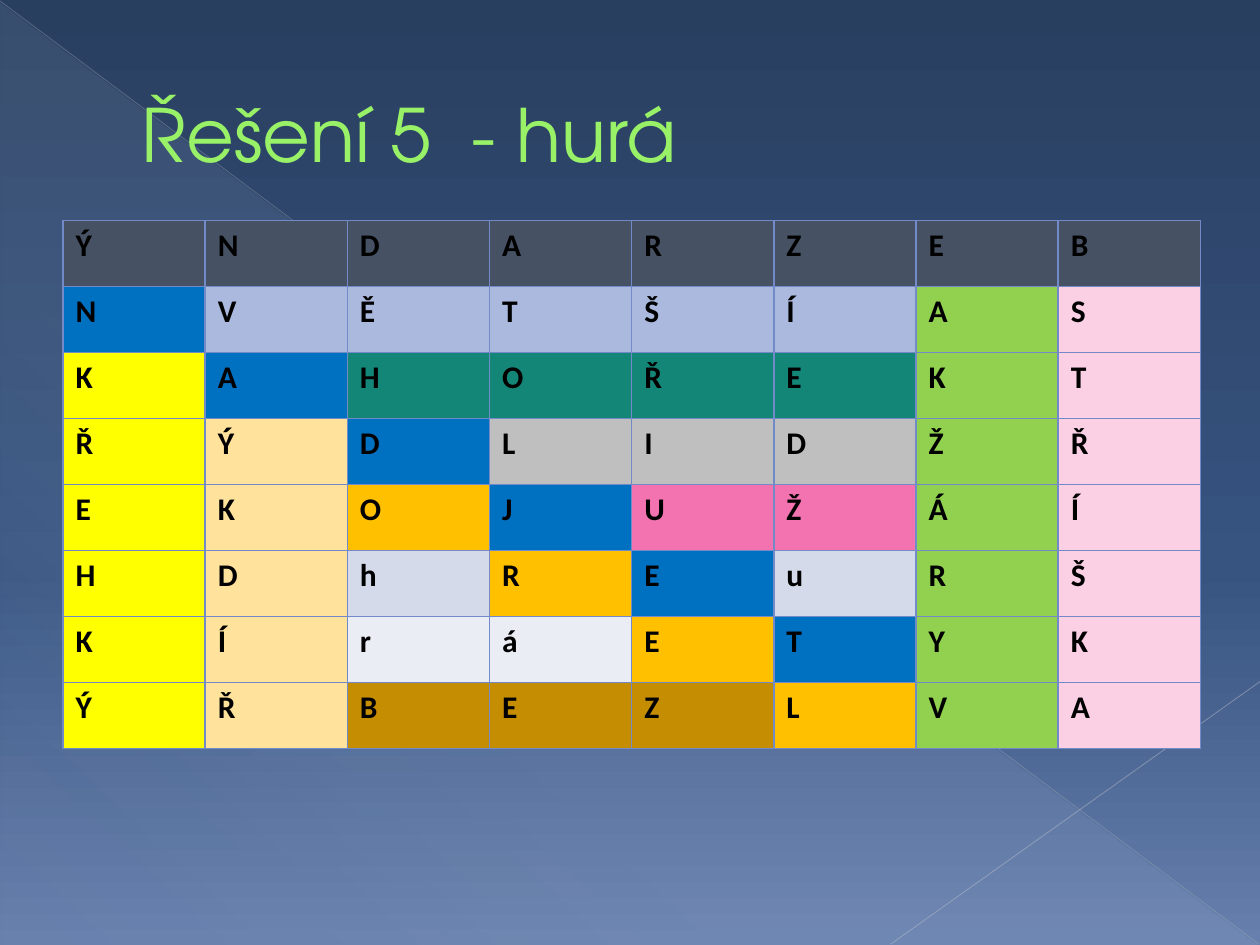
from lxml import etree
from pptx import Presentation
from pptx.dml.color import RGBColor
from pptx.enum.shapes import MSO_CONNECTOR, MSO_SHAPE
from pptx.enum.text import MSO_ANCHOR
from pptx.oxml.ns import qn
from pptx.util import Pt

STRAIGHT = MSO_CONNECTOR.STRAIGHT
RIGHT_TRIANGLE = MSO_SHAPE.RIGHT_TRIANGLE
MIDDLE = MSO_ANCHOR.MIDDLE

NIGHT = RGBColor(0x29, 0x3F, 0x60)
DUSK = RGBColor(0x37, 0x53, 0x80)
HAZE = RGBColor(0x66, 0x7F, 0xAC)
ICE = RGBColor(0xD6, 0xEC, 0xFF)
LONG_LINE = RGBColor(0xB7, 0xBC, 0xC5)
SHORT_LINE = RGBColor(0xBF, 0xC3, 0xCB)
TITLE_GREEN = RGBColor(0x98, 0xF1, 0x67)
BORDER = RGBColor(0x73, 0x8A, 0xC8)
BLACK = RGBColor(0x00, 0x00, 0x00)
SLATE = RGBColor(0x46, 0x52, 0x64)
BLUE = RGBColor(0x00, 0x70, 0xC0)
PERIWINKLE = RGBColor(0xAB, 0xB9, 0xDE)
GREEN = RGBColor(0x92, 0xD0, 0x50)
PALE_PINK = RGBColor(0xFB, 0xD0, 0xE4)
YELLOW = RGBColor(0xFF, 0xFF, 0x00)
TEAL = RGBColor(0x13, 0x86, 0x77)
CREAM = RGBColor(0xFF, 0xE3, 0x9D)
GREY = RGBColor(0xBF, 0xBF, 0xBF)
ORANGE = RGBColor(0xFF, 0xC0, 0x00)
PINK = RGBColor(0xF2, 0x73, 0xAF)
DARK_BAND = RGBColor(0xD5, 0xDA, 0xEB)
LIGHT_BAND = RGBColor(0xEB, 0xED, 0xF5)
BROWN = RGBColor(0xC5, 0x8D, 0x01)

LETTER_ROWS = [
    "ÝNDARZEB",
    "NVĚTŠÍAS",
    "KAHOŘEKT",
    "ŘÝDLIDŽŘ",
    "EKOJUŽÁÍ",
    "HDhREuRŠ",
    "KÍráETYK",
    "ÝŘBEZLVA",
]
WORD_COLORS = [
    [SLATE] * 8,
    [BLUE] + [PERIWINKLE] * 5 + [GREEN, PALE_PINK],
    [YELLOW, BLUE] + [TEAL] * 4 + [GREEN, PALE_PINK],
    [YELLOW, CREAM, BLUE] + [GREY] * 3 + [GREEN, PALE_PINK],
    [YELLOW, CREAM, ORANGE, BLUE, PINK, PINK, GREEN, PALE_PINK],
    [YELLOW, CREAM, DARK_BAND, ORANGE, BLUE, DARK_BAND, GREEN, PALE_PINK],
    [YELLOW, CREAM, LIGHT_BAND, LIGHT_BAND, ORANGE, BLUE, GREEN, PALE_PINK],
    [YELLOW, CREAM, BROWN, BROWN, BROWN, ORANGE, GREEN, PALE_PINK],
]


def add_color(parent, color, opacity=100):
    element = etree.SubElement(parent, qn("a:srgbClr"), val=str(color))
    if opacity < 100:
        etree.SubElement(element, qn("a:alpha"), val=str(opacity * 1000))


def set_gradient(fill, owner, stops, angle):
    fill.gradient()
    fill.gradient_angle = 360 - angle
    stop_list = next(owner.iter(qn("a:gsLst")))
    for stop in list(stop_list):
        stop_list.remove(stop)
    for position, color, opacity in stops:
        stop = etree.SubElement(stop_list, qn("a:gs"), pos=str(position * 1000))
        add_color(stop, color, opacity)


def add_thin_line(slide, start, end, color, width, opacity):
    line = slide.shapes.add_connector(
        STRAIGHT, *(Pt(value) for value in (*start, *end)))
    line.line.width = Pt(width)
    line.line.color.rgb = color
    color_element = next(line.element.spPr.iter(qn("a:srgbClr")))
    etree.SubElement(color_element, qn("a:alpha"), val=str(opacity * 1000))
    etree.SubElement(line.element.spPr, qn("a:effectLst"))


def add_backdrop(slide, width, height):
    set_gradient(slide.background.fill, slide.element,
                 [(0, NIGHT, 100), (60, DUSK, 100), (100, HAZE, 100)], 90)
    triangle = slide.shapes.add_shape(
        RIGHT_TRIANGLE, Pt(0.5), Pt(1.5), Pt(width - 1.5), Pt(height - 1.5))
    triangle.shadow.inherit = False
    triangle.line.fill.background()
    set_gradient(triangle.fill, triangle.element,
                 [(0, ICE, 10), (70, ICE, 8), (100, ICE, 1)], 133)
    add_thin_line(slide, (0, 0.5), (width - 0.5, height - 0.5),
                  LONG_LINE, 0.39, 35)
    add_thin_line(slide, (width, 389.5), (509, height - 0.5),
                  SHORT_LINE, 0.47, 45)


def add_title(slide, left, top, width, height):
    box = slide.shapes.add_textbox(Pt(left), Pt(top), Pt(width), Pt(height))
    frame = box.text_frame
    frame.word_wrap = True
    frame.vertical_anchor = MIDDLE
    paragraph = frame.paragraphs[0]
    paragraph.text = "Řešení 5  - hurá"
    paragraph.font.name = "TeX Gyre Adventor"
    paragraph.font.size = Pt(42)
    paragraph.font.color.rgb = TITLE_GREEN
    paragraph._p.get_or_add_pPr().set("marL", str(Pt(38)))


def fill_cell(cell, letter, color):
    properties = cell._tc.get_or_add_tcPr()
    for side in ("lnL", "lnR", "lnT", "lnB"):
        border = etree.SubElement(properties, qn(f"a:{side}"), w=str(Pt(1)))
        add_color(etree.SubElement(border, qn("a:solidFill")), BORDER)
    cell.fill.solid()
    cell.fill.fore_color.rgb = color
    paragraph = cell.text_frame.paragraphs[0]
    paragraph.text = letter
    paragraph.font.name = "Calibri"
    paragraph.font.size = Pt(18)
    paragraph.font.bold = True
    paragraph.font.color.rgb = BLACK


def add_word_search(slide, left, top, width, height):
    row_count, column_count = len(LETTER_ROWS), len(LETTER_ROWS[0])
    table = slide.shapes.add_table(
        row_count, column_count, Pt(left), Pt(top), Pt(width), Pt(height)).table
    for column in table.columns:
        column.width = Pt(width / column_count)
    for row, letters, colors in zip(table.rows, LETTER_ROWS, WORD_COLORS):
        row.height = Pt(height / row_count)
        for cell, letter, color in zip(row.cells, letters, colors):
            fill_cell(cell, letter, color)


def main():
    presentation = Presentation()
    presentation.slide_width = Pt(720)
    presentation.slide_height = Pt(540)
    slide = presentation.slides.add_slide(presentation.slide_layouts[6])
    add_backdrop(slide, 720, 540)
    add_title(slide, 36, 21, 648, 110)
    add_word_search(slide, 36, 126, 650, 302)
    presentation.save("out.pptx")


if __name__ == "__main__":
    main()
